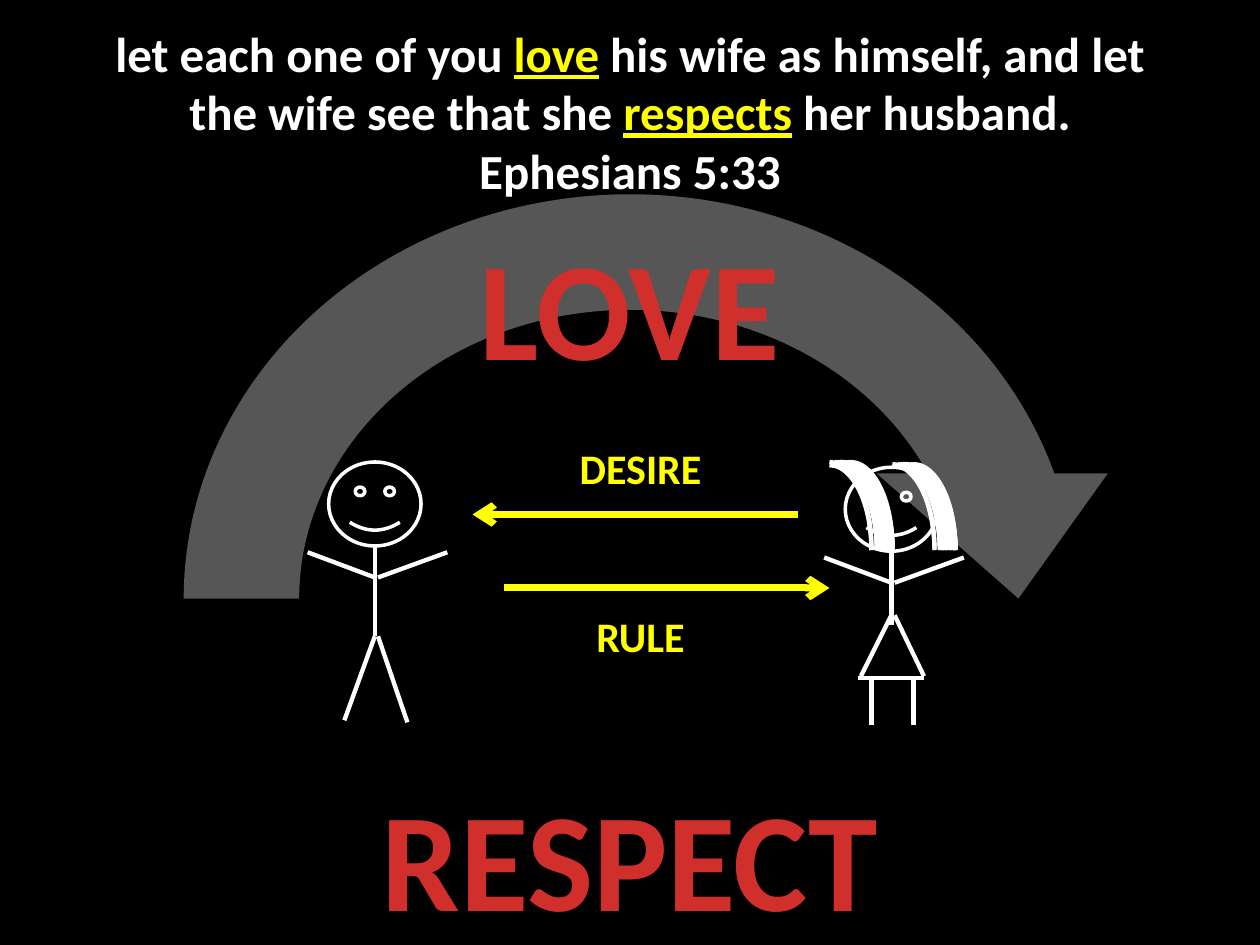
from lxml.etree import SubElement
from pptx import Presentation
from pptx.dml.color import RGBColor
from pptx.enum.shapes import MSO_CONNECTOR, MSO_SHAPE
from pptx.enum.text import MSO_ANCHOR, PP_ALIGN
from pptx.oxml.ns import qn
from pptx.util import Inches, Pt

BLACK = RGBColor(0x00, 0x00, 0x00)
WHITE = RGBColor(0xFF, 0xFF, 0xFF)
YELLOW = RGBColor(0xFF, 0xFF, 0x00)
RED = RGBColor(0xD0, 0x2F, 0x2C)
GRAY = RGBColor(0xD9, 0xD9, 0xD9)

# The slide is a grid of 120 columns by 90 rows, twelve to the inch
COLUMNS, ROWS = 120, 90


def cell(count):
    return Inches(count / 12)


def add_text(shapes, box, paragraphs, size, color):
    """Each paragraph is a list of (text, format) runs."""
    frame = shapes.add_textbox(*map(cell, box)).text_frame
    frame.word_wrap = True
    frame.vertical_anchor = MSO_ANCHOR.MIDDLE
    for index, runs in enumerate(paragraphs):
        paragraph = frame.paragraphs[0] if index == 0 else frame.add_paragraph()
        paragraph.alignment = PP_ALIGN.CENTER
        for text, style in runs:
            run = paragraph.add_run()
            run.text = text
            run.font.name = "Calibri"
            run.font.size = Pt(size)
            run.font.bold = True
            run.font.underline = style.get("underline", False)
            run.font.color.rgb = style.get("color", color)


def add_label(shapes, box, text, size, color):
    add_text(shapes, box, [[(text, {})]], size, color)


def add_line(shapes, start, end, color=WHITE, width=2.5, arrow=False):
    line = shapes.add_connector(MSO_CONNECTOR.STRAIGHT, *map(cell, start + end))
    line.line.color.rgb = color
    line.line.width = Pt(width)
    properties = line.element.spPr
    if arrow:
        SubElement(properties.find(qn("a:ln")), qn("a:tailEnd"), type="arrow")
    SubElement(properties, qn("a:effectLst"))


def add_outline(shapes, kind, box, width):
    outline = shapes.add_shape(kind, *map(cell, box))
    outline.shadow.inherit = False
    outline.fill.background()
    outline.line.color.rgb = WHITE
    outline.line.width = Pt(width)


def add_limbs(shapes, left, top, limbs):
    for x1, y1, x2, y2 in limbs:
        add_line(shapes, (left + x1, top + y1), (left + x2, top + y2))


def add_upper_body(shapes, left, top, waist):
    """Head, trunk and arms, shared by both figures."""
    add_outline(shapes, MSO_SHAPE.SMILEY_FACE, (left + 2, top, 8.8, 8), 2)
    add_limbs(shapes, left, top, [
        (6.4, 8, 6.4, waist),
        (6.4, 11, 0, 8.6),
        (6.7, 11, 13.3, 8.6),
    ])


def add_husband(slide, left, top):
    shapes = slide.shapes.add_group_shape().shapes
    add_upper_body(shapes, left, top, waist=16.6)
    add_limbs(shapes, left, top, [
        (6.7, 16.6, 9.5, 24.8),
        (6.4, 16.6, 3.5, 24.6),
    ])


def add_hair(shapes, left, top):
    """One tuft: a wide strand, then narrow strands fanned to the right."""
    strands = [(0, 10)] + [(shift, 8) for shift in (0, 0.5, 0.8, 1, 1.3, 1.7, 2)]
    for shift, width in strands:
        add_outline(shapes, MSO_SHAPE.ARC, (left + shift, top, width, 16.2), 2.5)


def add_wife(slide, left, top):
    shapes = slide.shapes.add_group_shape().shapes
    add_upper_body(shapes, left, top, waist=15)
    # Skirt and shins
    add_limbs(shapes, left, top, [
        (6.7, 14.1, 9.5, 19.9),
        (6.4, 14.1, 3.5, 19.9),
        (9.5, 20.1, 3.2, 20.1),
        (4.5, 20.1, 4.5, 24.5),
        (8.5, 20.1, 8.5, 24.5),
    ])
    for x, y in [(2.5, -0.2), (-3.5, -0.2), (-3.5, -0.5), (2.5, -0.3)]:
        add_hair(shapes, left + x, top + y)


def add_cycle_arrow(slide, box):
    cycle = slide.shapes.add_shape(MSO_SHAPE.CIRCULAR_ARROW, *map(cell, box))
    cycle.shadow.inherit = False
    cycle.line.fill.background()
    cycle.fill.solid()
    cycle.fill.fore_color.rgb = GRAY
    color = cycle.element.spPr.find(qn("a:solidFill"))[0]
    SubElement(color, qn("a:alpha"), val="40000")


def add_verse(slide, box):
    stressed = {"color": YELLOW, "underline": True}
    add_text(slide.shapes, box, [
        [
            ("let each one of you ", {}),
            ("love", stressed),
            (" his wife as himself, and let the wife see that she ", {}),
            ("respects", stressed),
            (" her husband.", {}),
        ],
        [("Ephesians 5:33", {})],
    ], 28, WHITE)


def add_exchange(slide, left, top):
    """Desire points to the husband, rule points to the wife."""
    shapes = slide.shapes
    for text, text_row, arrow_row, start, end in [
        ("DESIRE", 0, 9, 31, 0),
        ("RULE", 16, 16, 3, 34),
    ]:
        add_line(shapes, (left + start, top + arrow_row),
                 (left + end, top + arrow_row), YELLOW, 4, arrow=True)
        add_label(shapes, (left + 6, top + text_row, 20, 9), text, 24, YELLOW)


def main():
    presentation = Presentation()
    presentation.slide_width = cell(COLUMNS)
    presentation.slide_height = cell(ROWS)
    slide = presentation.slides.add_slide(presentation.slide_layouts[6])
    slide.background.fill.solid()
    slide.background.fill.fore_color.rgb = BLACK

    add_cycle_arrow(slide, (12, 13, 96, 88))
    add_husband(slide, 29.3, 44)
    add_wife(slide, 78.5, 44.5)
    add_verse(slide, (9, 3.6, 102, 14))
    add_exchange(slide, 45, 40)
    add_label(slide.shapes, (36, 23, 48, 12), "LOVE", 80, RED)
    add_label(slide.shapes, (26, 76, 68, 11), "RESPECT", 80, RED)

    presentation.save("out.pptx")


if __name__ == "__main__":
    main()
